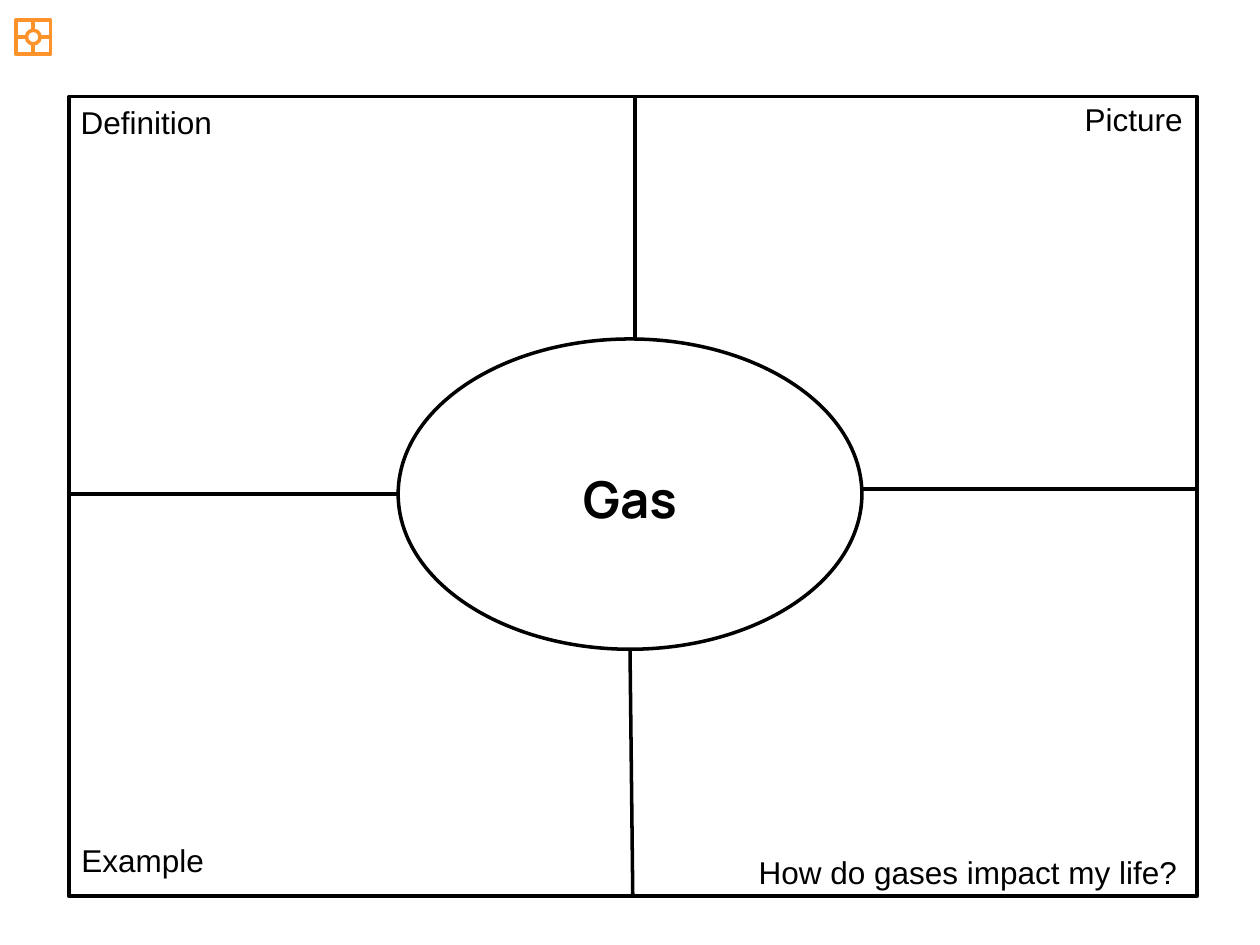
import pptx
import pptx.dml.color
import pptx.enum.shapes
import pptx.enum.text
import pptx.oxml.ns
import pptx.util
from lxml import etree

Pt = pptx.util.Pt
RGB = pptx.dml.color.RGBColor
MSO = pptx.enum.shapes.MSO_SHAPE
ALIGN = pptx.enum.text.PP_ALIGN
COLORS = {"ink": "000000", "icon": "FF932B", "paper": "FFFFFF"}


def draw_organizer(s, frame, oval, dividers, color):
    rgb = RGB.from_string(COLORS[color])
    box = s.shapes.add_shape(MSO.RECTANGLE, *map(Pt, frame))
    box.fill.background()
    lines = []
    for ends in dividers:
        cn = s.shapes.add_connector(
            pptx.enum.shapes.MSO_CONNECTOR.STRAIGHT, *map(Pt, ends))
        etree.SubElement(cn.element.spPr, pptx.oxml.ns.qn("a:effectLst"))
        lines.append(cn)
    center = s.shapes.add_shape(MSO.OVAL, *map(Pt, oval))
    center.fill.solid()
    center.fill.fore_color.rgb = RGB.from_string(COLORS["paper"])
    for sp in (box, center):
        sp.shadow.inherit = False
    for sp in (box, center, *lines):
        sp.line.color.rgb = rgb
        sp.line.width = Pt(2)


def write_text(sp, text, size, font, align, bold=False):
    tf = sp.text_frame
    tf.word_wrap = True
    tf.auto_size = pptx.enum.text.MSO_AUTO_SIZE.SHAPE_TO_FIT_TEXT
    tf.vertical_anchor = pptx.enum.text.MSO_ANCHOR.TOP
    p = tf.paragraphs[0]
    p.alignment = align
    r = p.add_run()
    r.text = text
    r.font.size = Pt(size)
    r.font.name = font
    r.font.bold = bold
    r.font.color.rgb = RGB.from_string(COLORS["ink"])


prs = pptx.Presentation()
prs.slide_width, prs.slide_height = Pt(720), Pt(540)
s = prs.slides.add_slide(prs.slide_layouts[5])

draw_organizer(
    s, (39.4, 55.2, 644.6, 457), (227.5, 193.7, 265, 177.3),
    [(362.9, 55.2, 362.9, 193.7), (360, 371, 361.6, 512),
     (39.4, 282.4, 227.5, 282.4), (492.5, 279.4, 684, 279.4)],
    "ink")

title = s.shapes.title
title.left, title.top, title.width, title.height = map(Pt, (235.4, 263.5, 249.1, 42.5))
title.element.getparent().append(title.element)
write_text(title, "Gas", 29, "Manrope", ALIGN.CENTER, True)

labels = [
    ("Definition", 39, 55.4, 90, ALIGN.LEFT),
    ("Example", 39.4, 477, 85, ALIGN.LEFT),
    ("Picture", 612.7, 53.5, 71.5, ALIGN.LEFT),
    ("How do gases impact my life?", 356.4, 484, 323.3, ALIGN.RIGHT),
]
for text, left, top, width, align in labels:
    sp = s.shapes.add_textbox(Pt(left), Pt(top), Pt(width), Pt(29))
    write_text(sp, text, 18, "Arial", align)

x, y, side, hole = 9.2, 11.4, 19.6, 7.8
cx, cy = x + side / 2, y + side / 2
gap = (side - hole) / 2
draw_organizer(
    s, (x, y, side, side), (x + gap, y + gap, hole, hole),
    [(cx, y, cx, y + gap), (cx, y + side - gap, cx, y + side),
     (x, cy, x + gap, cy), (x + side - gap, cy, x + side, cy)],
    "icon")

prs.save("out.pptx")
